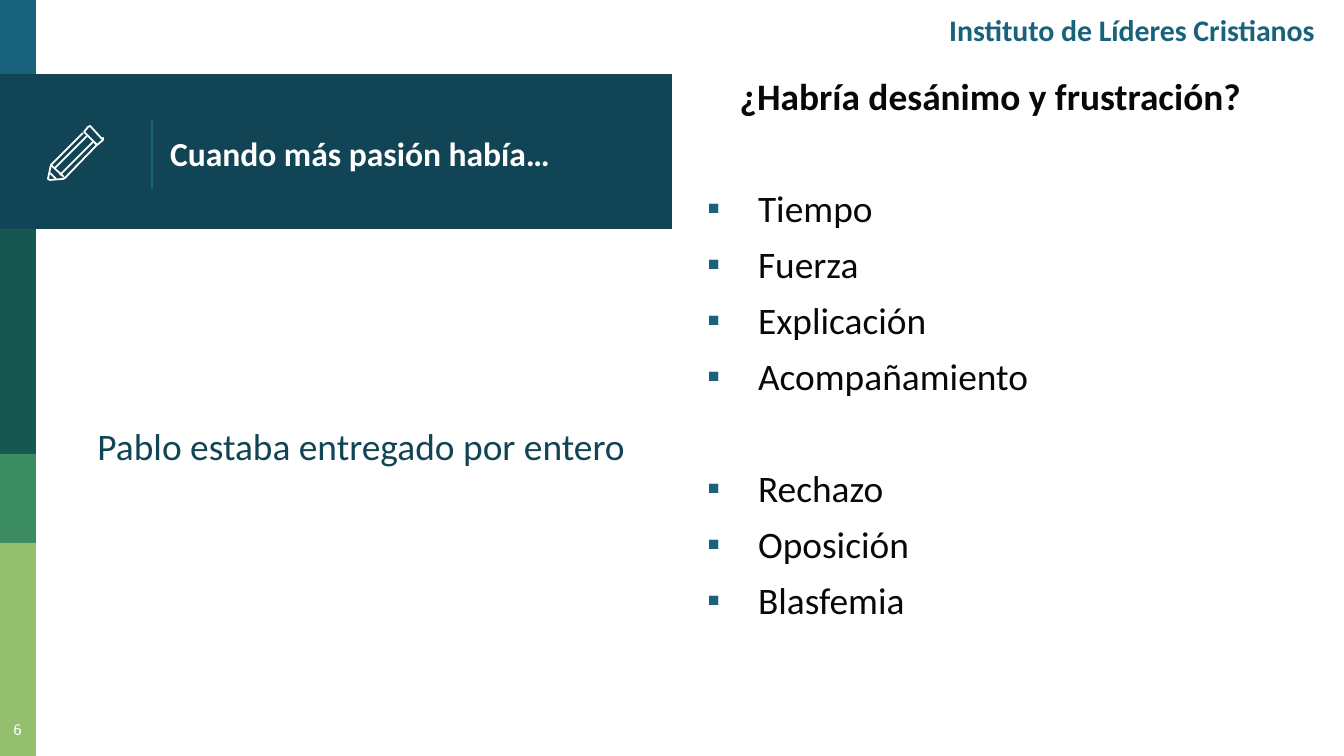
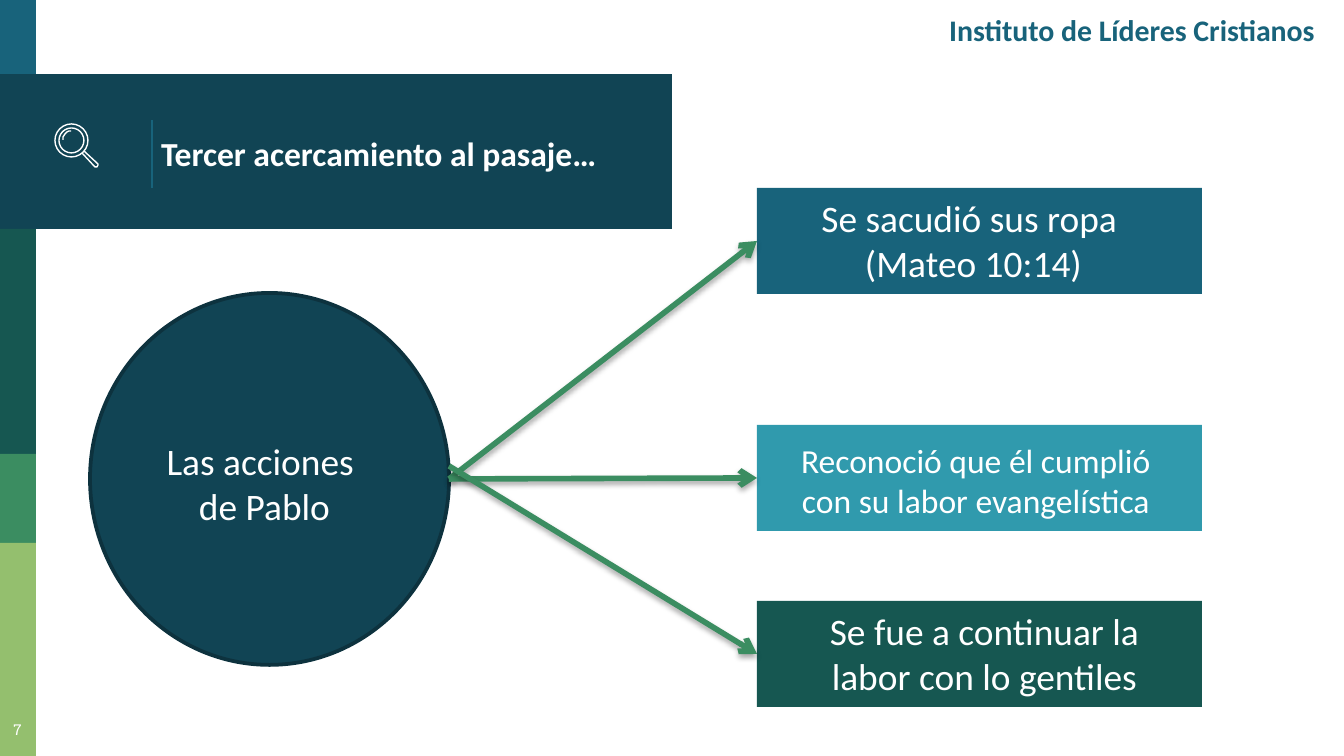
import pptx
import pptx.dml.color
import pptx.enum.dml
import pptx.enum.shapes
import pptx.enum.text
import pptx.oxml
import pptx.oxml.ns
import pptx.util
from lxml import etree

RGB = pptx.dml.color.RGBColor
SHAPE = pptx.enum.shapes.MSO_SHAPE
STRAIGHT = pptx.enum.shapes.MSO_CONNECTOR.STRAIGHT
ALIGN = pptx.enum.text.PP_ALIGN
ANCHOR = pptx.enum.text.MSO_ANCHOR

BLUE = RGB(0x18, 0x63, 0x7B)
NAVY = RGB(0x11, 0x44, 0x54)
NAVY_EDGE = RGB(0x0D, 0x32, 0x3E)
PINE = RGB(0x16, 0x57, 0x51)
GREEN = RGB(0x3B, 0x8D, 0x61)
LIME = RGB(0x94, 0xBF, 0x6E)
TEAL = RGB(0x30, 0x9A, 0xAD)
INK = RGB(0x08, 0x08, 0x08)
WHITE = RGB(0xFF, 0xFF, 0xFF)

SLIDE_W, SLIDE_H = 1344, 756
SCALE = 914400 * 10 / SLIDE_W
INSET = 13
SIDE_W = 36
LINE_PITCH = 30  # points from one 20 pt line to the next
INSTITUTE = "Instituto de Líderes Cristianos"


def px(length):
    return pptx.util.Emu(round(length * SCALE))


def emu_box(box):
    return [px(length) for length in box]


def add_child(parent, tag, **attributes):
    child = etree.SubElement(parent, pptx.oxml.ns.qn(tag))
    for key, value in attributes.items():
        child.set(key, str(value))
    return child


def add_filled(shapes, kind, box, fill, edge=None):
    shape = shapes.add_shape(kind, *emu_box(box))
    shape.shadow.inherit = False
    if fill is None:
        shape.fill.background()
    else:
        shape.fill.solid()
        shape.fill.fore_color.rgb = fill
    if edge is None:
        shape.line.fill.background()
    else:
        set_line(shape, *edge)
    return shape


def set_line(shape, color, width):
    shape.line.color.rgb = color
    shape.line.width = pptx.util.Pt(width)


def set_frame(shape, box, anchor=ANCHOR.TOP, inset=INSET, top=None):
    """Place a text holder and return its text frame."""
    shape.left, shape.top, shape.width, shape.height = emu_box(box)
    frame = shape.text_frame
    frame.word_wrap = True
    frame.auto_size = pptx.enum.text.MSO_AUTO_SIZE.NONE
    frame.vertical_anchor = anchor
    frame.margin_left = frame.margin_right = px(INSET)
    frame.margin_bottom = px(inset)
    frame.margin_top = px(inset if top is None else top)
    return frame


def write(paragraph, text, size, color, bold=False, align=ALIGN.LEFT,
          before=0, bullet=False, face="Calibri"):
    paragraph.text = text
    properties = paragraph._p.get_or_add_pPr()
    indent = px(51) if bullet else 0
    properties.set("marL", str(indent))
    properties.set("indent", str(-indent))
    if bullet:
        add_child(add_child(properties, "a:buClr"), "a:srgbClr", val=BLUE)
        add_child(properties, "a:buChar", char="▪")
    else:
        add_child(properties, "a:buNone")
    paragraph.alignment = align
    paragraph.space_before = pptx.util.Pt(before)
    font = paragraph.font
    font.name, font.size, font.bold = face, pptx.util.Pt(size), bold
    font.color.rgb = color


def add_text(slide, box, lines, size, color, inset=INSET, top=None, **style):
    holder = slide.shapes.add_textbox(*emu_box(box))
    frame = set_frame(holder, box, inset=inset, top=top)
    for index, line in enumerate(lines):
        paragraph = frame.add_paragraph() if index else frame.paragraphs[0]
        write(paragraph, line, size, color, **style)


def move_bands_to_master(prs, slide):
    """Draw the side bands and title band once, behind every slide."""
    bands = [
        (0, 0, SIDE_W, 78, BLUE),
        (0, 74, 672, 155, NAVY),
        (0, 229, SIDE_W, 225, PINE),
        (0, 454, SIDE_W, 89, GREEN),
        (0, 543, SIDE_W, SLIDE_H - 543, LIME),
    ]
    parts = [add_filled(slide.shapes, SHAPE.RECTANGLE, box, fill)
             for *box, fill in bands]
    divider = slide.shapes.add_connector(STRAIGHT, *emu_box((152, 120, 152, 188)))
    set_line(divider, BLUE, 0.75)
    add_child(divider.element.spPr, "a:effectLst")
    for number, part in enumerate(parts + [divider]):
        part.element.xpath(".//p:cNvPr")[0].set("id", str(100 + number))
        prs.slide_master.shapes.element.append(part.element)


def add_frame(slide, title, title_left, number):
    """Fill the title, the institute header and the page number."""
    frame = set_frame(slide.shapes.title, (title_left, 78, 567, 151), ANCHOR.MIDDLE)
    write(frame.paragraphs[0], title, 18, WHITE, bold=True)
    add_text(slide, (831, 8, 497, 82), [INSTITUTE], 16, BLUE, top=4,
             bold=True, align=ALIGN.RIGHT)
    add_text(slide, (-8, 708, 51, 47), [str(number)], 8, WHITE,
             align=ALIGN.CENTER, face="Roboto Slab")


def add_stroke(shapes, left, top, points, width, close=False):
    builder = shapes.build_freeform(*points[0], scale=SCALE)
    builder.add_line_segments(points[1:], close=close)
    stroke = builder.convert_to_shape(px(left), px(top))
    stroke.shadow.inherit = False
    stroke.fill.background()
    set_line(stroke, WHITE, width)


def add_pencil(slide, left, top):
    shapes = slide.shapes.add_group_shape().shapes
    eraser = [(54, 13), (43, 1), (42, 0), (40, 1), (36, 6), (49, 19), (55, 14), (55, 12)]
    strokes = [
        [(45, 16), (12, 49)],
        [(35, 7), (3, 39), (0, 53), (2, 54), (15, 53), (17, 52), (49, 19)],
        [(7, 42), (39, 10)],
        [(8, 53), (2, 47)],
        [(3, 39), (16, 51)],
    ]
    add_stroke(shapes, left, top, eraser, 0.96, close=True)
    for points in strokes:
        add_stroke(shapes, left, top, points, 0.96)


def add_magnifier(slide, left, top):
    shapes = slide.shapes.add_group_shape().shapes
    for gap, size in ((0, 33), (4, 25)):
        add_filled(shapes, SHAPE.OVAL, (left + gap, top + gap, size, size),
                   None, (WHITE, 0.75))
    glint = [(8, 16), (8, 13), (10, 10), (12, 8), (14, 7), (16, 7)]
    handle = [(27, 29), (40, 43), (42, 43), (43, 41), (43, 40), (29, 27)]
    for points in (glint, handle):
        add_stroke(shapes, left, top, points, 0.75)


def add_passion_content(slide, box):
    """Set the statement on the left and the list on the right."""
    left, top, width, height = box
    statement, causes = list(slide.placeholders)[1:]
    half = 593
    frame = set_frame(statement, (left, top + 182, half, height - 160),
                      top=INSET + 168)
    write(frame.paragraphs[0], "Pablo estaba entregado por entero ", 20, NAVY,
          align=ALIGN.CENTER)

    frame = set_frame(causes, (left + width - half, top, half, height))
    write(frame.paragraphs[0], "¿Habría desánimo y frustración?", 20, INK,
          bold=True, align=ALIGN.CENTER)
    groups = [["Tiempo", "Fuerza", "Explicación", "Acompañamiento"],
              ["Rechazo", "Oposición", "Blasfemia"]]
    for group in groups:
        for index, cause in enumerate(group):
            before = 6 if index else 6 + LINE_PITCH
            write(frame.add_paragraph(), cause, 20, INK, before=before, bullet=True)


def add_arrow(slide, start, action):
    arrow = slide.shapes.add_connector(STRAIGHT, *emu_box(start + start))
    arrow.end_connect(action, 1)
    set_line(arrow, GREEN, 3)
    add_child(arrow.line._get_or_add_ln(), "a:tailEnd", type="arrow")
    effects = add_child(arrow.element.spPr, "a:effectLst")
    shadow = add_child(effects, "a:outerShdw", blurRad=40000, dist=23000,
                       dir=5400000, rotWithShape=0)
    add_child(add_child(shadow, "a:srgbClr", val="000000"), "a:alpha", val=35000)


def add_actions_diagram(slide, box):
    """Link the circle on the left to the three actions on the right."""
    left, top, width, height = box
    circle = (left, top + 105, 359, 372)
    action_w, action_h = 445, 106
    action_left = left + width - action_w
    circle_right, circle_middle = left + 359, top + 291
    # top, colour, arrow start, label left, label top, label width, size, text
    actions = [
        (0, BLUE, 0, 21, 0, 391, 20, "Se sacudió sus ropa \n(Mateo 10:14)"),
        (237, TEAL, 0, -37, 8, 512, 18,
         "Reconoció que él cumplió\ncon su labor evangelística"),
        (413, PINE, -13, 32, 0, 391, 20,
         "Se fue a continuar la labor con lo gentiles"),
    ]
    add_filled(slide.shapes, SHAPE.OVAL, circle, NAVY, (NAVY_EDGE, 2))
    label_style = dict(inset=7, align=ALIGN.CENTER)
    for drop, color, shift, label_x, label_y, label_w, size, label in actions:
        action = add_filled(slide.shapes, SHAPE.RECTANGLE,
                            (action_left, top + drop, action_w, action_h), color)
        add_arrow(slide, (circle_right, circle_middle + shift), action)
        add_text(slide, (action_left + label_x, top + drop + label_y, label_w, 104),
                 [label], size, WHITE, **label_style)
    add_text(slide, (left - 21, top + 243, 391, 104),
             ["Las acciones ", "de Pablo"], 20, WHITE, **label_style)


def main():
    prs = pptx.Presentation()
    prs.slide_width, prs.slide_height = px(SLIDE_W), px(SLIDE_H)
    two_content, title_only = prs.slide_layouts[3], prs.slide_layouts[5]

    passion = prs.slides.add_slide(two_content)
    move_bands_to_master(prs, passion)
    add_frame(passion, "Cuando más pasión había…", 157, 6)
    add_pencil(passion, 48, 126)
    add_passion_content(passion, (69, 60, 1218, 624))

    approach = prs.slides.add_slide(title_only)
    add_frame(approach, "Tercer acercamiento al pasaje…", 148, 7)
    add_magnifier(approach, 55, 124)
    add_actions_diagram(approach, (90, 188, 1112, 518))

    prs.save("out.pptx")


if __name__ == "__main__":
    main()
